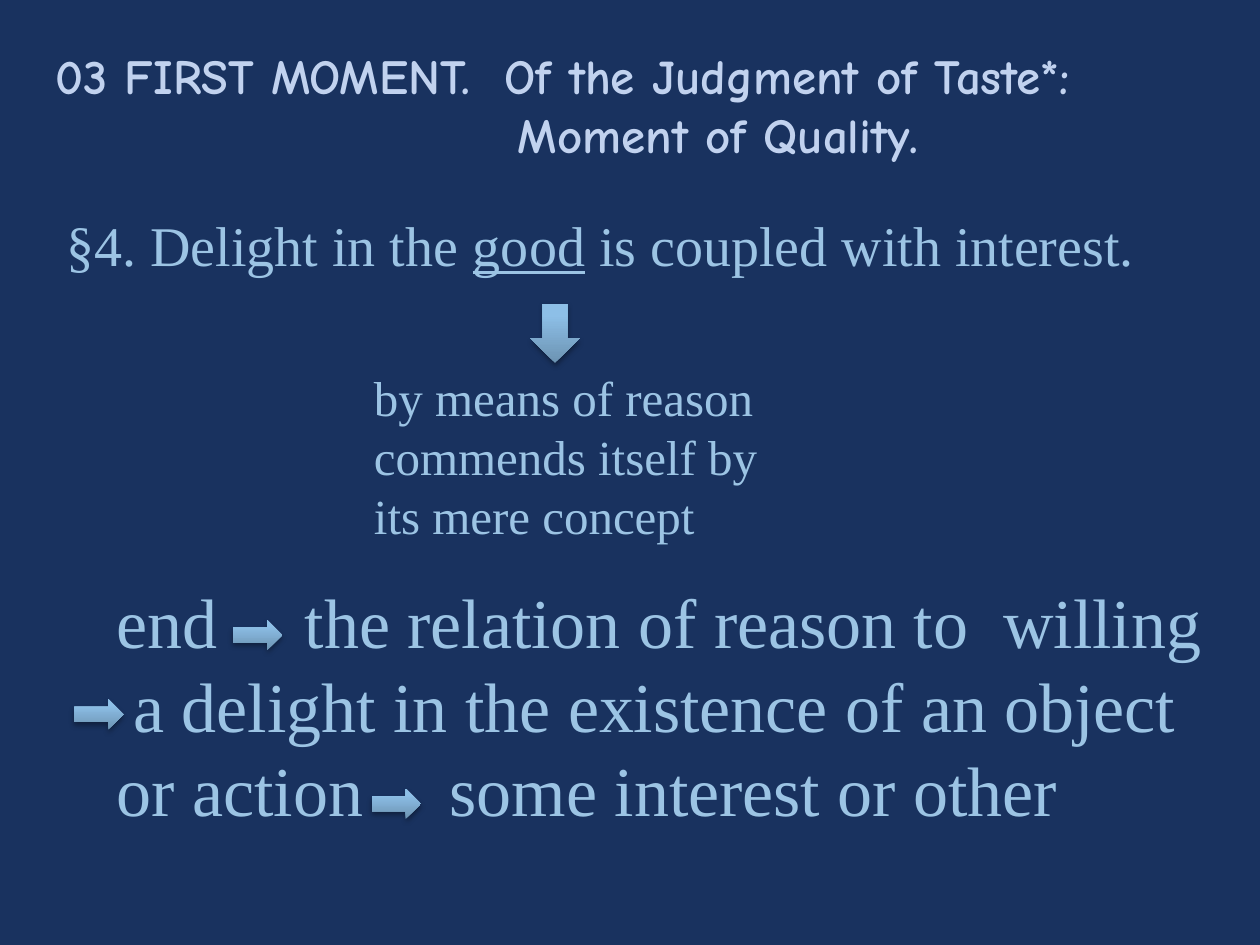
from lxml import etree
from pptx import Presentation
from pptx.dml.color import RGBColor
from pptx.enum.shapes import MSO_SHAPE
from pptx.enum.text import MSO_ANCHOR, MSO_AUTO_SIZE, PP_ALIGN
from pptx.oxml.ns import qn
from pptx.util import Inches, Pt

DOWN_ARROW, RIGHT_ARROW = MSO_SHAPE.DOWN_ARROW, MSO_SHAPE.RIGHT_ARROW
LEFT, TOP, NO_FIT = PP_ALIGN.LEFT, MSO_ANCHOR.TOP, MSO_AUTO_SIZE.NONE
COLORS = {
    "background": "19325F",
    "title": "C1D2EF",
    "body": "9CC4E4",
    "arrow_dark": "6C93B2",
    "arrow_light": "8DBFE7",
    "shadow": "000000",
}
TITLE_FONT, BODY_FONT = "Comic Neue", "Times New Roman"


def color(name):
    """Return the named palette colour."""
    return RGBColor.from_string(COLORS[name])


def box(left, top, width, height):
    """Return a box given in inches as lengths."""
    return Inches(left), Inches(top), Inches(width), Inches(height)


def style(paragraph, size, font=BODY_FONT, tint="body", bold=False):
    """Format a whole paragraph."""
    paragraph.alignment = LEFT
    paragraph.space_before = Pt(0)
    paragraph.font.name = font
    paragraph.font.size = Pt(size)
    paragraph.font.bold = bold
    paragraph.font.color.rgb = color(tint)


def indent(paragraph, margin):
    """Set the left margin in inches."""
    properties = paragraph._p.get_or_add_pPr()
    properties.set("marL", str(Inches(margin)))
    properties.set("indent", "0")


def add_tab(paragraph, position):
    """Give a paragraph one left tab stop."""
    tabs = etree.Element(qn("a:tabLst"))
    etree.SubElement(tabs, qn("a:tab"), pos=str(Inches(position)), algn="l")
    fonts = paragraph._p.get_or_add_pPr().find(qn("a:defRPr"))
    fonts.addprevious(tabs)


def add_text(shapes, area, lines, size):
    """Add a wrapped text box and return its paragraphs."""
    frame = shapes.add_textbox(*area).text_frame
    frame.word_wrap = True
    frame.text = "\n".join(lines)
    for paragraph in frame.paragraphs:
        style(paragraph, size)
    return frame.paragraphs


def add_arrow(shapes, kind, area):
    """Add a shaded block arrow with a soft shadow."""
    arrow = shapes.add_shape(kind, *area)
    arrow.line.fill.background()
    arrow.fill.gradient()
    arrow.fill.gradient_angle = 90
    shades = ((0, "arrow_dark"), (0.8, "arrow_light"))
    for stop, (position, tint) in zip(arrow.fill.gradient_stops, shades):
        stop.position = position
        stop.color.rgb = color(tint)
    arrow.shadow.inherit = False
    effects = arrow._element.spPr.find(qn("a:effectLst"))
    shadow = etree.SubElement(
        effects, qn("a:outerShdw"), blurRad=str(Pt(3.1)), dist=str(Pt(1.8)),
        dir="5400000", rotWithShape="0")
    tint = etree.SubElement(shadow, qn("a:srgbClr"), val=COLORS["shadow"])
    etree.SubElement(tint, qn("a:alpha"), val="35000")


def place_title(slide, area):
    """Set the two-line title, its second line stepped in."""
    title = slide.shapes.title
    title.left, title.top, title.width, title.height = area
    frame = title.text_frame
    frame.word_wrap, frame.auto_size = True, NO_FIT
    frame.vertical_anchor = TOP
    frame.text = ("03 FIRST MOMENT.  Of the Judgment of Taste*:\n"
                  "Moment of Quality.")
    for paragraph, margin in zip(frame.paragraphs, (0.03, 3.7)):
        style(paragraph, 28, TITLE_FONT, "title", True)
        indent(paragraph, margin)


def place_thesis(slide, area):
    """Add the section statement with its key word underlined."""
    thesis = add_text(slide.shapes, area, [""], 32)[0]
    for words in ("§4. Delight in the ", "good", " is coupled with interest."):
        run = thesis.add_run()
        run.text = words
        if words == "good":
            run.font.underline = True


def place_reason(slide, area):
    """Add the explanation of the good beneath its arrow."""
    left, top, width, height = area
    group = slide.shapes.add_group_shape().shapes
    add_arrow(group, DOWN_ARROW, (left + Inches(1.34), top - Inches(0.46),
                                  Inches(0.39), Inches(0.47)))
    add_text(group, area,
             ["by means of reason commends itself by its mere concept"], 28)


def place_conclusion(slide, area):
    """Add the chain from end to interest with its linking arrows."""
    left, top, width, height = area
    group = slide.shapes.add_group_shape().shapes
    end, delight, action = add_text(group, area, [
        "end\tthe relation of reason to  willing",
        "a delight in the existence of an object",
        "or action\tsome interest or other",
    ], 40)
    add_tab(end, 1.49)
    indent(delight, 0.13)
    add_tab(action, 2.64)
    for across, down in ((1.02, 0.38), (-0.24, 1.01), (2.12, 1.72)):
        add_arrow(group, RIGHT_ARROW, (left + Inches(across),
                                       top + Inches(down),
                                       Inches(0.39), Inches(0.24)))


def main():
    """Build and save the slide."""
    deck = Presentation()
    deck.slide_width, deck.slide_height = Inches(10), Inches(7.5)
    slide = deck.slides.add_slide(deck.slide_layouts[5])
    slide.background.fill.solid()
    slide.background.fill.fore_color.rgb = color("background")
    place_title(slide, box(0.31, 0.31, 8.98, 1.04))
    place_thesis(slide, box(0.43, 1.62, 8.9, 0.64))
    place_reason(slide, box(2.87, 2.87, 3.54, 1.51))
    place_conclusion(slide, box(0.83, 4.54, 9.06, 2.12))
    deck.save("out.pptx")


if __name__ == "__main__":
    main()
